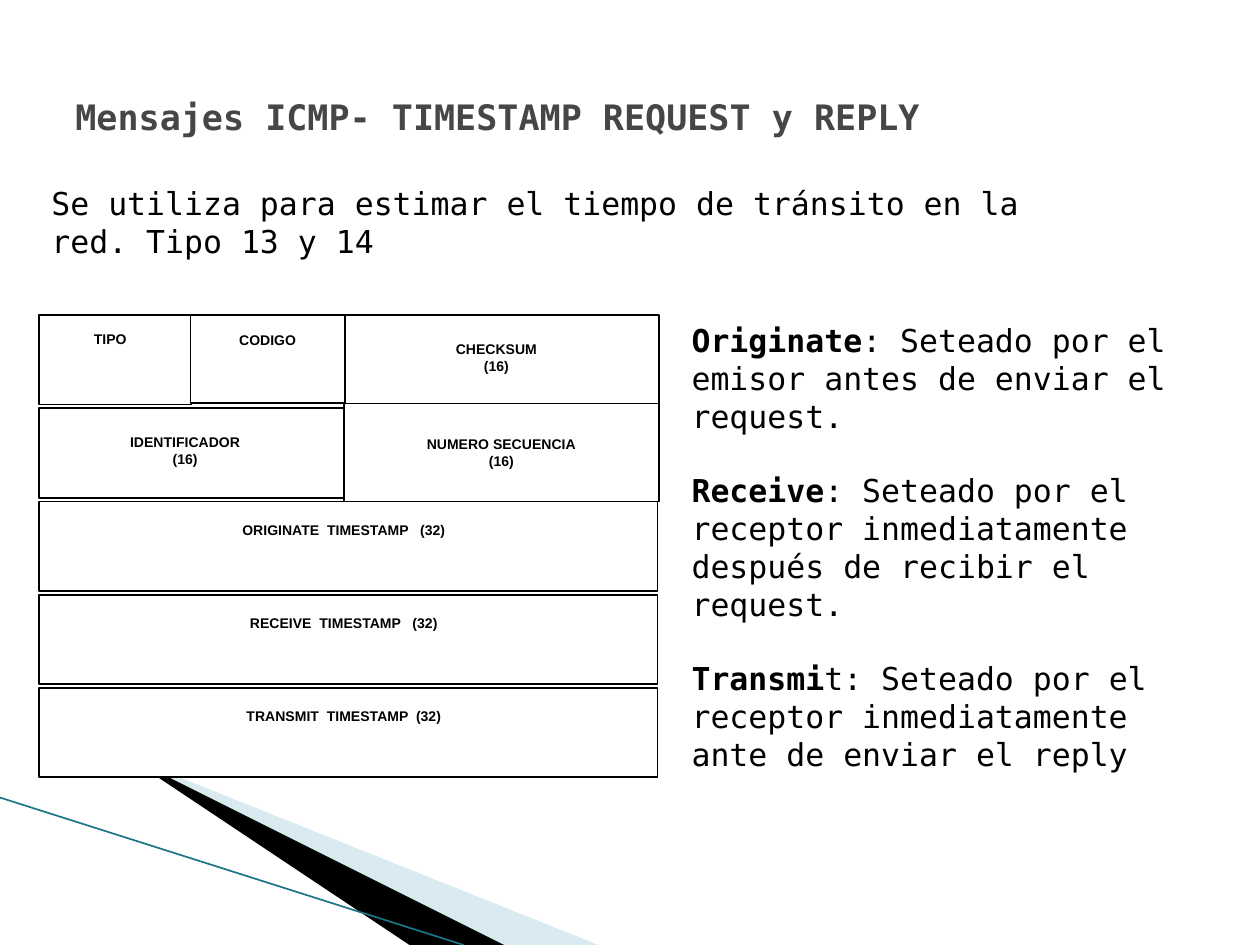
import dataclasses

import lxml.etree
import pptx
import pptx.dml.color
import pptx.enum.shapes
import pptx.enum.text
import pptx.oxml.ns
import pptx.util

Inches = pptx.util.Inches
Pt = pptx.util.Pt
Align = pptx.enum.text.PP_ALIGN
Anchor = pptx.enum.text.MSO_ANCHOR


@dataclasses.dataclass
class Theme:
    mono: str = "DejaVu Sans Mono"
    sans: str = "Arial"
    title_size: float = 20
    body_size: float = 18
    label_size: float = 8
    title: str = "464646"
    ink: str = "000000"
    paper: str = "FFFFFF"
    pale: str = "A0CBDC"
    edge: str = "1B7587"


def rgb(value):
    return pptx.dml.color.RGBColor.from_string(value)


class SlideBuilder:
    def __init__(self, page, theme):
        self.page = page
        self.theme = theme

    def wedge(self, points, color, alpha=None):
        builder = self.page.shapes.build_freeform(*points[0], scale=Inches(1))
        builder.add_line_segments(points[1:], close=True)
        shape = builder.convert_to_shape()
        shape.shadow.inherit = False
        shape.fill.solid()
        shape.fill.fore_color.rgb = rgb(color)
        shape.line.fill.background()
        if alpha is not None:
            tag = pptx.oxml.ns.qn("a:srgbClr")
            fill_color = next(shape.fill._xPr.iter(tag))
            node = lxml.etree.SubElement(fill_color, pptx.oxml.ns.qn("a:alpha"))
            node.set("val", str(alpha * 1000))

    def line(self, start, end, color, width):
        connector = self.page.shapes.add_connector(
            pptx.enum.shapes.MSO_CONNECTOR.STRAIGHT,
            *map(Inches, start + end))
        connector.line.color.rgb = rgb(color)
        connector.line.width = Pt(width)
        lxml.etree.SubElement(
            connector._element.spPr, pptx.oxml.ns.qn("a:effectLst"))

    def field(self, left, top, width, height, border=1):
        shape = self.page.shapes.add_shape(
            pptx.enum.shapes.MSO_SHAPE.RECTANGLE,
            *map(Inches, (left, top, width, height)))
        shape.shadow.inherit = False
        shape.fill.solid()
        shape.fill.fore_color.rgb = rgb(self.theme.paper)
        shape.line.color.rgb = rgb(self.theme.ink)
        shape.line.width = Pt(border)

    def text(self, place, paragraphs, size, font, color=None, bold=False,
             align=Align.LEFT, anchor=Anchor.TOP, gap=0):
        """Each paragraph is a string or a (bold lead, plain rest) pair."""
        box = self.page.shapes.add_textbox(*map(Inches, place))
        frame = box.text_frame
        frame.word_wrap = True
        frame.vertical_anchor = anchor
        for index, content in enumerate(paragraphs):
            para = frame.paragraphs[0] if index == 0 else frame.add_paragraph()
            para.alignment = align
            if index:
                para.space_before = Pt(gap)
            if isinstance(content, str):
                spans = [(content, bold)]
            else:
                spans = zip(content, (True, False))
            for words, strong in spans:
                span = para.add_run()
                span.text = words
                span.font.name = font
                span.font.size = Pt(size)
                span.font.bold = strong
                span.font.color.rgb = rgb(color or self.theme.ink)

    def label(self, place, *lines):
        self.text(place, lines, self.theme.label_size, self.theme.sans,
                  bold=True, align=Align.CENTER, anchor=Anchor.MIDDLE)


def main():
    deck = pptx.Presentation()
    deck.slide_width, deck.slide_height = Inches(10), Inches(7.5)
    theme = Theme()
    slide = SlideBuilder(deck.slides.add_slide(deck.slide_layouts[6]), theme)

    # Corner decoration
    slide.wedge([(0.55, 6.5), (5.9, 7.5), (4.55, 7.5)], theme.pale, alpha=40)
    slide.wedge([(0.53, 6.49), (4.54, 7.5), (3.68, 7.5)], theme.ink)
    slide.line((0, 6.33), (3.68, 7.5), theme.edge, 0.95)

    # Message header fields
    left, middle, half = 0.31, 2.73, 2.5
    slide.field(left, 2.5, 1.21, 0.71)
    slide.field(middle, 2.5, half, 0.71)
    slide.field(1.51, 2.5, 1.23, 0.7, border=0.75)
    slide.label((0.44, 2.51, 0.87, 0.36), "TIPO")
    slide.label((1.51, 2.52, 1.23, 0.36), "CODIGO")
    slide.label((3.15, 2.51, 1.58, 0.65), "CHECKSUM", "(16)")

    # Timestamp rows
    timestamps = ["ORIGINATE  TIMESTAMP   (32)", "RECEIVE  TIMESTAMP   (32)",
                  "TRANSMIT  TIMESTAMP  (32)"]
    for row, name in enumerate(timestamps):
        top = 3.98 + 0.74 * row
        slide.field(left, top, 4.91, 0.71)
        slide.label((1.01, top + 0.02, 3.44, 0.41), name)

    # Identifier and sequence number
    slide.field(left, 3.24, 2.44, 0.71)
    slide.label((0.44, 3.25, 2.06, 0.65), "IDENTIFICADOR", "(16)")
    slide.field(middle, 3.2, half, 0.78, border=0.75)
    slide.label((middle, 3.2, half, 0.78), "NUMERO SECUENCIA", "(16)")

    # Title, introduction and explanations
    slide.text((0.5, 0.3, 9, 1.25),
               ["Mensajes ICMP- TIMESTAMP REQUEST y REPLY"],
               theme.title_size, theme.mono, theme.title, bold=True,
               anchor=Anchor.MIDDLE)
    slide.text((0.31, 1.41, 8.36, 1.01),
               ["Se utiliza para estimar el tiempo de tránsito en la red. "
                "Tipo 13 y 14"], theme.body_size, theme.mono)
    slide.text((5.39, 2.5, 4.22, 3.13), [
        ("Originate", ": Seteado por el emisor antes de enviar el request."),
        ("Receive", ": Seteado por el receptor inmediatamente después de "
                    "recibir el request."),
        ("Transmi", "t: Seteado por el receptor inmediatamente ante de "
                    "enviar el reply"),
    ], theme.body_size, theme.mono, gap=21)

    deck.save("out.pptx")


if __name__ == "__main__":
    main()
